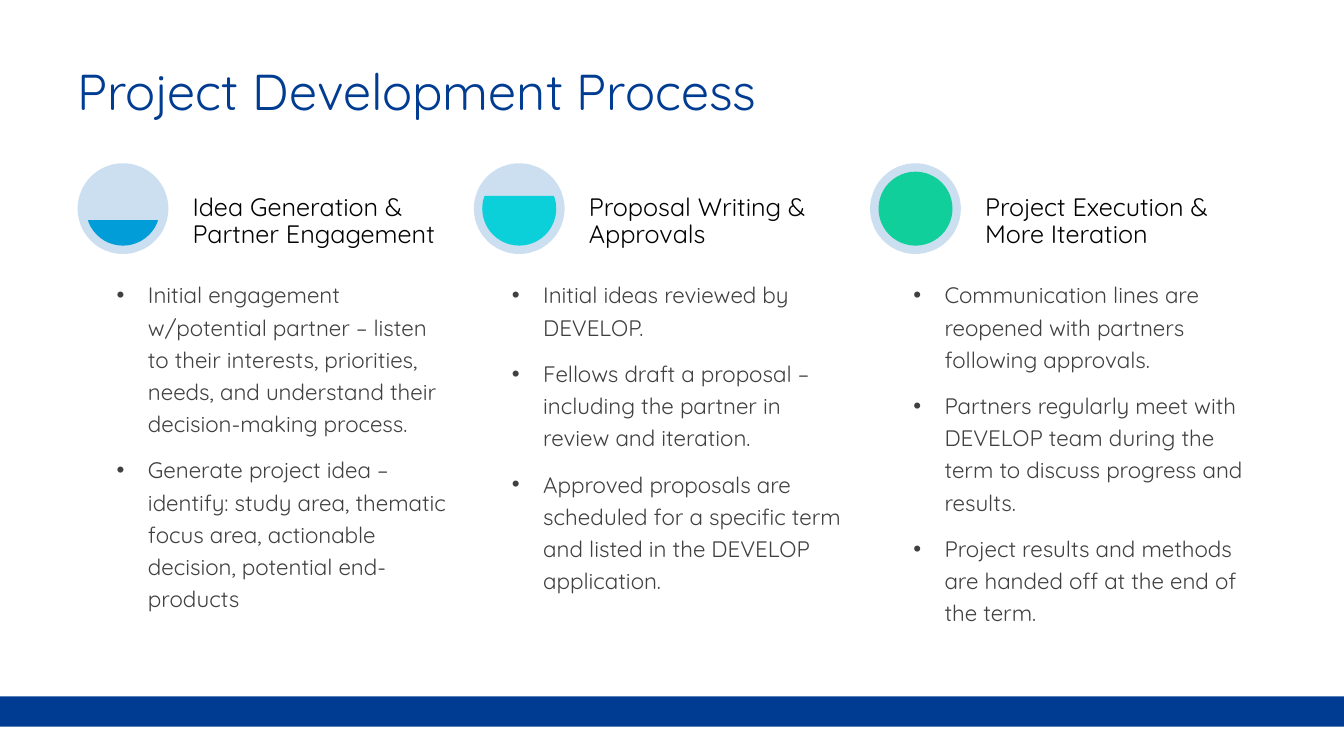
from dataclasses import dataclass
from typing import Any

from lxml.etree import SubElement
from pptx import Presentation
from pptx.dml.color import RGBColor
from pptx.enum.shapes import MSO_SHAPE as Preset
from pptx.enum.text import MSO_ANCHOR as Anchor, PP_ALIGN as Align
from pptx.oxml.ns import qn
from pptx.util import Emu, Pt

COLORS = {
    "navy": "003C92",
    "pale": "CCDFF1",
    "blue": "009DD9",
    "cyan": "0BD0D9",
    "green": "10CF9B",
    "black": "000000",
    "gray": "404040",
}
FONT = "Quicksand"
SLIDE_WIDTH, SLIDE_HEIGHT = 1333, 750
STAGE_LEFT, STAGE_PITCH, STAGE_TOP = 77, 393, 162
DIAL_SIZE, DIAL_INSET = 90, 9
HEADING_OFFSET, HEADING_WIDTH = 109, 266
STEPS_TOP, STEPS_HEIGHT, BULLET_INDENT = 269, 421, 31


@dataclass(frozen=True)
class Box:
    left: int
    top: int
    width: int
    height: int

    def emu(self) -> tuple[Emu, ...]:
        return tuple(px(n) for n in (self.left, self.top, self.width, self.height))


@dataclass(frozen=True)
class TextStyle:
    size: int
    color: str
    line_spacing: float
    anchor: Anchor
    margin_x: int = 10
    space_before: int = 0
    bulleted: bool = False


@dataclass(frozen=True)
class Stage:
    heading: str
    color: str
    chord: tuple[float, float]
    steps_left: int
    steps_width: int
    steps: tuple[str, ...]


TITLE = TextStyle(36, "navy", 0.9, Anchor.MIDDLE)
HEADING = TextStyle(18, "black", 0.9, Anchor.BOTTOM, margin_x=5)
STEPS = TextStyle(16, "gray", 1.2, Anchor.TOP, space_before=10, bulleted=True)

STAGES = (
    Stage(
        "Idea Generation & Partner Engagement", "blue", (11.68, 96.32), 106, 353,
        (
            "Initial engagement w/potential partner – listen to their interests, "
            "priorities, needs, and understand their decision-making process.",
            "Generate project idea – identify: study area, thematic focus area, "
            "actionable decision, potential end-products",
        ),
    ),
    Stage(
        "Proposal Writing & Approvals", "cyan", (204.32, 119.68), 498, 353,
        (
            "Initial ideas reviewed by DEVELOP.",
            "Fellows draft a proposal – including the partner in review and iteration.",
            "Approved proposals are scheduled for a specific term and listed in the "
            "DEVELOP application.",
        ),
    ),
    Stage(
        "Project Execution & More Iteration", "green", (162, 162), 896, 371,
        (
            "Communication lines are reopened with partners following approvals.",
            "Partners regularly meet with DEVELOP team during the term to discuss "
            "progress and results.",
            "Project results and methods are handed off at the end of the term.",
        ),
    ),
)


def px(length: int) -> Emu:
    return Emu(length * 9144)


def rgb(color: str) -> RGBColor:
    return RGBColor.from_string(COLORS[color])


def apply(target: Any, formats: dict[str, Any]) -> None:
    for attribute, value in formats.items():
        setattr(target, attribute, value)


def add_bullet(paragraph: Any) -> None:
    properties = paragraph._p.get_or_add_pPr()
    properties.set("marL", str(px(BULLET_INDENT)))
    properties.set("indent", str(-px(BULLET_INDENT)))
    SubElement(properties, qn("a:buFont")).set("typeface", "Arial")
    SubElement(properties, qn("a:buChar")).set("char", "•")


def add_text(slide: Any, box: Box, lines: tuple[str, ...], style: TextStyle) -> None:
    frame = slide.shapes.add_textbox(*box.emu()).text_frame
    apply(frame, {
        "word_wrap": True,
        "vertical_anchor": style.anchor,
        "margin_left": px(style.margin_x),
        "margin_right": px(style.margin_x),
        "margin_top": px(5),
        "margin_bottom": px(5),
    })
    for index, line in enumerate(lines):
        paragraph = frame.add_paragraph() if index else frame.paragraphs[0]
        if style.bulleted:
            add_bullet(paragraph)
        apply(paragraph, {
            "alignment": Align.LEFT,
            "line_spacing": style.line_spacing,
            "space_before": Pt(style.space_before if index else 0),
        })
        run = paragraph.add_run()
        run.text = line
        apply(run.font, {"name": FONT, "size": Pt(style.size)})
        run.font.color.rgb = rgb(style.color)


def add_filled(slide: Any, preset: Preset, box: Box, color: str) -> Any:
    shape = slide.shapes.add_shape(preset, *box.emu())
    shape.shadow.inherit = False
    shape.fill.solid()
    shape.fill.fore_color.rgb = rgb(color)
    shape.line.fill.background()
    return shape


def add_stage(slide: Any, left: int, stage: Stage) -> None:
    add_filled(slide, Preset.OVAL, Box(left, STAGE_TOP, DIAL_SIZE, DIAL_SIZE), "pale")
    level_size = DIAL_SIZE - 2 * DIAL_INSET
    level_box = Box(left + DIAL_INSET, STAGE_TOP + DIAL_INSET, level_size, level_size)
    level = add_filled(slide, Preset.CHORD, level_box, stage.color)
    for index, angle in enumerate(stage.chord):
        level.adjustments[index] = angle
    level.line.color.rgb = rgb(stage.color)
    level.line.width = Pt(1)

    heading_box = Box(left + HEADING_OFFSET, STAGE_TOP, HEADING_WIDTH, DIAL_SIZE)
    add_text(slide, heading_box, (stage.heading,), HEADING)
    steps_box = Box(stage.steps_left, STEPS_TOP, stage.steps_width, STEPS_HEIGHT)
    add_text(slide, steps_box, stage.steps, STEPS)


def main() -> None:
    deck = Presentation()
    apply(deck, {"slide_width": px(SLIDE_WIDTH), "slide_height": px(SLIDE_HEIGHT)})
    slide = deck.slides.add_slide(deck.slide_layouts[6])
    add_filled(slide, Preset.RECTANGLE, Box(0, 691, SLIDE_WIDTH, 30), "navy")
    add_text(slide, Box(67, 40, 1239, 107), ("Project Development Process",), TITLE)
    for index, stage in enumerate(STAGES):
        add_stage(slide, STAGE_LEFT + index * STAGE_PITCH, stage)
    deck.save("out.pptx")


if __name__ == "__main__":
    main()
